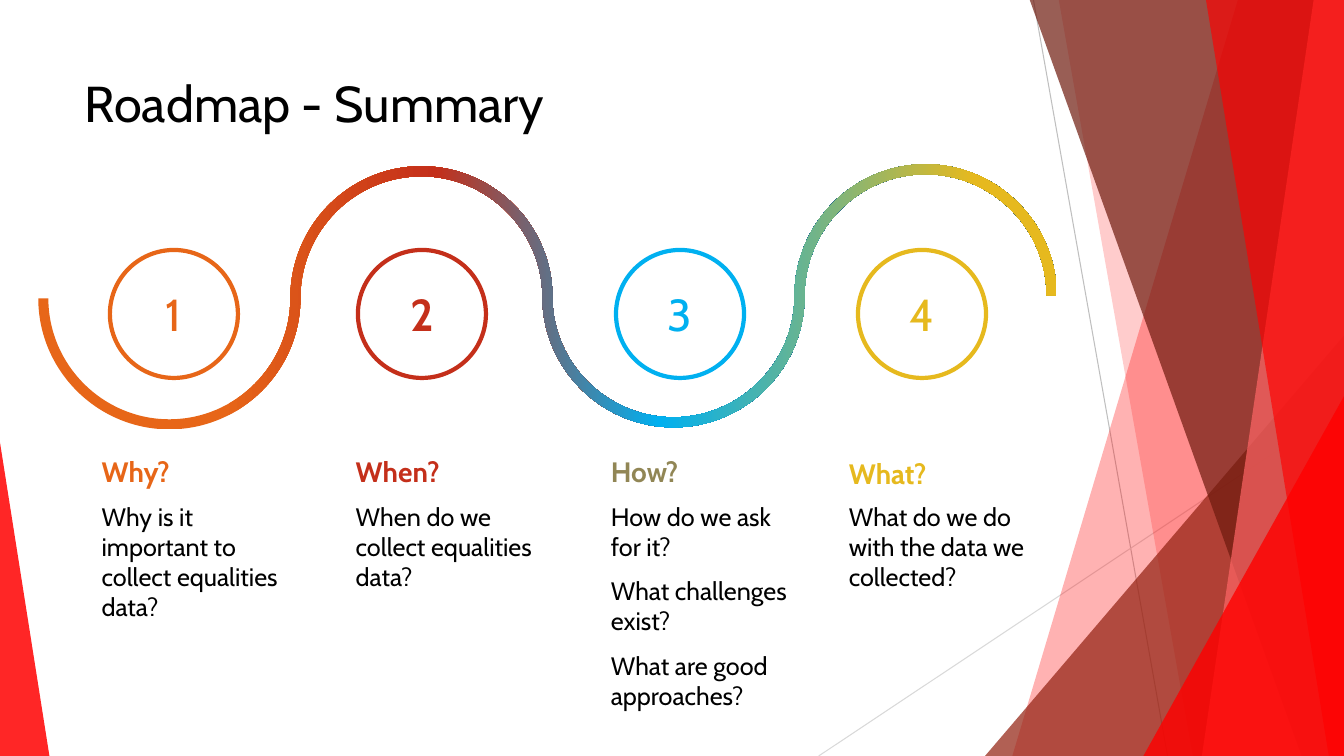
import lxml.etree
import pptx
import pptx.dml.color
import pptx.enum.shapes
import pptx.enum.text
import pptx.oxml
import pptx.oxml.ns
import pptx.util
from pptx.util import Inches

FONT = "Cabin"
COLORS = {
    "black": "000000", "white": "FFFFFF", "orange": "E76618", "rust": "C42F1A",
    "blue": "00B0F0", "gold": "E6B91E", "olive": "918655", "red": "FF0000",
    "pink": "FF6666", "brick": "932313", "maroon": "6E1A0E",
    "gray": "BFBFBF", "light gray": "D9D9D9",
}
TOP, BOTTOM, RIGHT = -0.01, 7.5, 13.33

# Circle left, text left, heading top, text height, circle colour, heading colour,
# bold number, heading, lines
STEPS = [
    (1.09, 0.91, 4.46, 1.26, "orange", "orange", False, "Why?",
     ["Why is it important to collect equalities data?"]),
    (3.55, 3.43, 4.46, 2.01, "rust", "rust", True, "When?",
     ["When do we collect equalities data?"]),
    (6.11, 5.96, 4.46, 1.39, "blue", "olive", False, "How?",
     ["How do we ask for it?", "What challenges exist?", "What are good approaches?"]),
    (8.51, 8.32, 4.48, 1.68, "gold", "gold", False, "What?",
     ["What do we do with the data we collected?"]),
]
WAVE_STOPS = [(18, "orange"), (39, "rust"), (61, "blue"), (92, "gold")]
# Bezier points of a half circle of radius 1, after its start at (-1, 0)
HALF_CIRCLE = [(-1, 0.55), (-0.55, 1), (0, 1), (0.55, 1), (1, 0.55), (1, 0)]


def rgb(name):
    return pptx.dml.color.RGBColor.from_string(COLORS[name])


def fill_solid(shape, color, opacity=100):
    shape.shadow.inherit = False
    shape.fill.solid()
    shape.fill.fore_color.rgb = rgb(color)
    if opacity < 100:
        color_element = shape._element.spPr.find(".//" + pptx.oxml.ns.qn("a:srgbClr"))
        alpha = lxml.etree.SubElement(color_element, pptx.oxml.ns.qn("a:alpha"))
        alpha.set("val", str(opacity * 1000))


def fill_gradient(shape, stops):
    """Fill the shape from left to right with (percent, colour) stops."""
    stop_xml = "".join(
        f'<a:gs pos="{percent * 1000}"><a:srgbClr val="{COLORS[color]}"/></a:gs>'
        for percent, color in stops)
    gradient = pptx.oxml.parse_xml(
        f'<a:gradFill {pptx.oxml.ns.nsdecls("a")} rotWithShape="1"><a:gsLst>{stop_xml}</a:gsLst>'
        '<a:lin ang="0" scaled="0"/></a:gradFill>')
    shape.shadow.inherit = False
    shape._element.spPr.find(pptx.oxml.ns.qn("a:custGeom")).addnext(gradient)


def write_text(shape, lines, size=18, color="black", bold=False, align="LEFT",
               anchor="TOP", gap=0):
    """Write one paragraph per line, with gap points before each paragraph."""
    frame = shape.text_frame
    frame.word_wrap = True
    frame.auto_size = pptx.enum.text.MSO_AUTO_SIZE.NONE
    frame.vertical_anchor = getattr(pptx.enum.text.MSO_ANCHOR, anchor)
    for index, line in enumerate(lines):
        paragraph = frame.add_paragraph() if index else frame.paragraphs[0]
        paragraph.alignment = getattr(pptx.enum.text.PP_ALIGN, align)
        paragraph.space_before = pptx.util.Pt(gap)
        run = paragraph.add_run()
        run.text = line
        run.font.name = FONT
        run.font.size = pptx.util.Pt(size)
        run.font.bold = bold
        run.font.color.rgb = rgb(color)


def add_text(slide, left, top, width, height, lines, **text_format):
    box = slide.shapes.add_textbox(Inches(left), Inches(top), Inches(width), Inches(height))
    write_text(box, lines, gap=10, **text_format)


def add_outline(parent, points):
    """Add a closed, unlined freeform through points given in inches."""
    points = [(Inches(x), Inches(y)) for x, y in points]
    builder = parent.shapes.build_freeform(*points[0])
    builder.add_line_segments(points[1:], close=True)
    shape = builder.convert_to_shape()
    shape.line.fill.background()
    return shape


def add_band(parent, top_left, bottom_left, color, opacity):
    """Add a slanted band that reaches to the right edge of the slide."""
    band = add_outline(parent, [(top_left, TOP), (RIGHT, TOP), (RIGHT, BOTTOM),
                                (bottom_left, BOTTOM)])
    fill_solid(band, color, opacity)


def add_triangle(parent, left, top, width, apex, color, opacity):
    """Add a triangle standing on the bottom edge; apex runs from 0 (left) to 1 (right)."""
    triangle = parent.shapes.add_shape(
        pptx.enum.shapes.MSO_SHAPE.ISOSCELES_TRIANGLE,
        Inches(left), Inches(top), Inches(width), Inches(BOTTOM - top))
    triangle.adjustments[0] = apex
    triangle.line.fill.background()
    fill_solid(triangle, color, opacity)


def add_line(parent, start, end, color):
    line = parent.shapes.add_connector(
        pptx.enum.shapes.MSO_CONNECTOR.STRAIGHT, *map(Inches, start + end))
    line.line.color.rgb = rgb(color)
    line.line.width = pptx.util.Pt(0.75)
    lxml.etree.SubElement(line._element.spPr, pptx.oxml.ns.qn("a:effectLst"))


def add_background(slide):
    """Draw the facets as one group and move it to the back of the slide's layout."""
    facets = slide.shapes.add_group_shape()
    add_line(facets, (10.25, 0), (11.58, BOTTOM), "gray")
    add_line(facets, (RIGHT, 4.03), (8.12, BOTTOM), "light gray")
    add_band(facets, 12.28, 10.04, "red", 30)
    add_band(facets, 10.5, 11.83, "red", 20)
    add_triangle(facets, 9.77, 3.33, 3.56, 1, "brick", 72)
    add_band(facets, 10.21, 12.91, "maroon", 70)
    add_band(facets, 13.03, 11.92, "pink", 70)
    add_band(facets, 11.96, 13.18, "red", 65)
    add_triangle(facets, 11.34, 3.93, 1.99, 1, "red", 80)
    add_triangle(facets, 0, 4.39, 0.49, 0, "red", 85)
    slide.slide_layout.shapes._spTree.insert(2, facets._element)


def wave_edge(side, left=0.43, middle=2.96, radius=1.25, half_width=0.05):
    """Return the Bezier points of one edge; side is 1 for the lower and -1 for the upper."""
    points = [(left - side * half_width, middle)]
    for index in range(4):
        direction = -1 if index % 2 else 1
        edge_radius = radius + side * direction * half_width
        center = left + radius * (2 * index + 1)
        level = middle - 0.01 * index
        points += [(center + edge_radius * x, level + direction * edge_radius * y)
                   for x, y in HALF_CIRCLE]
    return points


def bend(lines):
    """Turn each three line segments of a freeform into one Bezier curve."""
    for first, second, third in zip(lines[::3], lines[1::3], lines[2::3]):
        curve = lxml.etree.Element(pptx.oxml.ns.qn("a:cubicBezTo"))
        first.addprevious(curve)
        for line in (first, second, third):
            curve.append(line[0])
            line.getparent().remove(line)


def add_wave(slide):
    lower, upper = wave_edge(1), wave_edge(-1)
    wave = add_outline(slide, lower + upper[::-1])
    lines = wave._element.findall(".//" + pptx.oxml.ns.qn("a:lnTo"))
    bend(lines[:len(lower) - 1])
    bend(lines[len(lower):len(lower) + len(upper) - 1])
    fill_gradient(wave, WAVE_STOPS)


def add_circle(slide, left, number, color, bold):
    circle = slide.shapes.add_shape(
        pptx.enum.shapes.MSO_SHAPE.OVAL,
        Inches(left), Inches(2.48), Inches(1.27), Inches(1.27))
    fill_solid(circle, "white")
    circle.line.color.rgb = rgb(color)
    circle.line.width = pptx.util.Pt(3)
    write_text(circle, [str(number)], size=32, color=color, bold=bold,
               align="CENTER", anchor="MIDDLE")


def add_title(slide, text):
    title = slide.shapes.title
    title.left, title.top, title.width, title.height = map(Inches, (0.74, 0.67, 9.4, 1.44))
    write_text(title, [text], size=36)


def main():
    presentation = pptx.Presentation()
    presentation.slide_width = Inches(13.33)
    presentation.slide_height = Inches(7.5)
    slide = presentation.slides.add_slide(presentation.slide_layouts.get_by_name("Title Only"))

    add_title(slide, "Roadmap - Summary")
    add_background(slide)
    add_wave(slide)
    for number, step in enumerate(STEPS, start=1):
        circle_left, left, top, height, color, heading_color, bold, heading, lines = step
        add_circle(slide, circle_left, number, color, bold)
        add_text(slide, left, top, 1.96, 0.33, [heading], size=20,
                 color=heading_color, bold=True)
        add_text(slide, left, 4.92, 1.98, height, lines)
    presentation.save("out.pptx")


if __name__ == "__main__":
    main()
